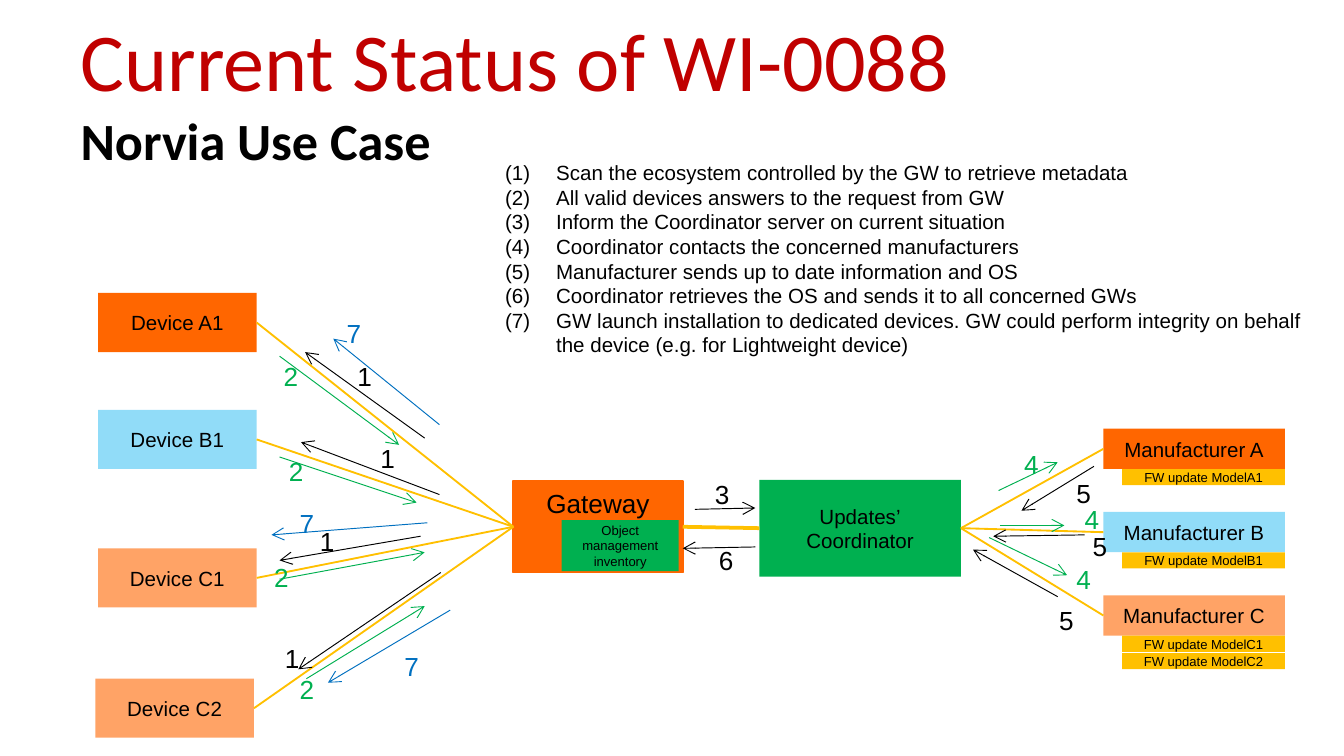
from pptx import Presentation
from pptx.dml.color import RGBColor
from pptx.enum.shapes import MSO_CONNECTOR as Connector, MSO_SHAPE as Shape
from pptx.enum.text import MSO_ANCHOR as Anchor, MSO_AUTO_SIZE as AutoSize, PP_ALIGN as Align
from pptx.oxml.ns import qn
from pptx.util import Inches, Pt
from lxml.etree import SubElement

COLORS = {
    "title": "C00000", "black": "000000", "green": "00B050", "blue": "0070C0",
    "orange": "FF6600", "sky": "00B0F0", "peach": "FFA366", "amber": "FFC000",
}
SKY_ALPHA = 43
STEP_COLORS = {1: "black", 2: "green", 3: "black", 4: "green", 5: "black", 6: "black", 7: "blue"}
TOP, LEFT, BOTTOM, RIGHT = range(4)

STEPS = [
    "Scan the ecosystem controlled by the GW to retrieve metadata",
    "All valid devices answers to the request from GW",
    "Inform the Coordinator server on current situation",
    "Coordinator contacts the concerned manufacturers",
    "Manufacturer sends up to date information and OS",
    "Coordinator retrieves the OS and sends it to all concerned GWs",
    "GW launch installation to dedicated devices. GW could perform integrity on behalf "
    "the device (e.g. for Lightweight device)",
]
# name, colour, left, top
DEVICES = [
    ("Device A1", "orange", 0.03, 0.18), ("Device B1", "sky", 0.03, 1.05),
    ("Device C1", "peach", 0.03, 2.08), ("Device C2", "peach", 0.01, 3.05),
]
# name, colour, firmware models
MANUFACTURERS = [
    ("Manufacturer A", "orange", ["A1"]),
    ("Manufacturer B", "sky", ["B1"]),
    ("Manufacturer C", "peach", ["C1", "C2"]),
]
# step, arrow start, arrow end, label corner; all relative to the region
DEVICE_FLOWS = [
    (1, (2.46, 1.26), (1.57, 0.62), (1.82, 0.65)),
    (1, (2.57, 1.68), (1.54, 1.29), (1.99, 1.26)),
    (1, (2.43, 1.99), (1.38, 2.17), (1.54, 1.88)),
    (1, (2.58, 2.26), (1.52, 2.98), (1.28, 2.75)),
    (2, (1.38, 0.65), (2.27, 1.31), (1.27, 0.65)),
    (2, (1.38, 1.4), (2.4, 1.74), (1.31, 1.36)),
    (2, (1.38, 2.31), (2.46, 2.11), (1.2, 2.15)),
    (2, (1.58, 3.05), (2.46, 2.51), (1.39, 2.98)),
    (7, (2.57, 1.16), (1.78, 0.52), (1.74, 0.33)),
    (7, (2.48, 1.89), (1.32, 1.98), (1.39, 1.75)),
    (7, (2.65, 2.54), (1.74, 3.08), (2.17, 2.81)),
]
HUB_FLOWS = [
    (3, (1.37, 0.29), (1.82, 0.28), (1.38, 0.03)),
    (6, (1.82, 0.57), (1.28, 0.58), (1.41, 0.52)),
]
MANUFACTURER_FLOWS = [
    (4, (0.43, 0.65), (0.87, 0.44), (0.48, 0.31)),
    (4, (0.44, 0.91), (0.92, 0.91), (0.93, 0.72)),
    (4, (0.36, 1), (0.94, 1.28), (0.87, 1.16)),
    (5, (1.14, 0.47), (0.6, 0.8), (0.87, 0.52)),
    (5, (1.07, 0.98), (0.39, 0.99), (0.99, 0.92)),
    (5, (0.87, 1.44), (0.24, 1.09), (0.74, 1.47)),
]


def rgb(name):
    return RGBColor.from_string(COLORS[name])


def add_span(para, text, size, color="black", font="Arial", bold=False):
    span = para.add_run()
    span.text = text
    span.font.size, span.font.name, span.font.bold = Pt(size), font, bold
    span.font.color.rgb = rgb(color)


def add_box(slide, left, top, width, height, lines, size, fill=None,
            color="black", kind=Shape.RECTANGLE, anchor=Anchor.MIDDLE):
    box = slide.shapes.add_shape(kind, *map(Inches, (left, top, width, height)))
    box.shadow.inherit = False
    box.line.fill.background()
    if fill:
        box.fill.solid()
        box.fill.fore_color.rgb = rgb(fill)
        if fill == "sky":
            tint = box.fill._xPr.find(qn("a:solidFill"))[0]
            SubElement(tint, qn("a:alpha")).set("val", str(SKY_ALPHA * 1000))
    else:
        box.fill.background()
    frame = box.text_frame
    frame.word_wrap, frame.vertical_anchor = True, anchor
    for index, line in enumerate(lines):
        para = frame.add_paragraph() if index else frame.paragraphs[0]
        para.alignment = Align.CENTER
        add_span(para, line, size, color)
    return box


def add_line(slide, start, end, color, width):
    line = slide.shapes.add_connector(Connector.STRAIGHT, *map(Inches, (*start, *end)))
    line.line.color.rgb = rgb(color)
    line.line.width = Pt(width)
    SubElement(line._element.spPr, qn("a:effectLst"))
    return line


def add_link(slide, start_box, end_box, width=1):
    """Join the right side of one box to the left side of the next."""
    link = add_line(slide, (0, 0), (0, 0), "amber", width)
    link.begin_connect(start_box, RIGHT)
    link.end_connect(end_box, LEFT)


def add_flows(slide, left, top, flows):
    """Draw numbered arrows for the steps of one region."""
    for step, start, end, label in flows:
        start, end, label = [(left + x, top + y) for x, y in (start, end, label)]
        arrow = add_line(slide, start, end, STEP_COLORS[step], 0.5)
        SubElement(arrow.line._get_or_add_ln(), qn("a:tailEnd")).set("type", "arrow")
        add_box(slide, *label, 0.28, 0.29, [str(step)], 14,
                color=STEP_COLORS[step], kind=Shape.OVAL)


def add_title(slide, left, top, width, height):
    title = slide.shapes.title
    title.left, title.top, title.width, title.height = map(Inches, (left, top, width, height))
    frame = title.text_frame
    frame.word_wrap, frame.auto_size, frame.vertical_anchor = True, AutoSize.NONE, Anchor.TOP
    heading, subheading = frame.paragraphs[0], frame.add_paragraph()
    heading.alignment = subheading.alignment = Align.LEFT
    add_span(heading, "Current Status of WI-0088", 44, "title", "Calibri")
    add_span(subheading, "Norvia Use Case", 28, "black", "Calibri", True)


def add_steps(slide, left, top, width, height):
    frame = slide.shapes.add_textbox(*map(Inches, (left, top, width, height))).text_frame
    frame.word_wrap = True
    for index, step in enumerate(STEPS):
        para = frame.add_paragraph() if index else frame.paragraphs[0]
        props = para._p.get_or_add_pPr()
        props.set("marL", str(Inches(0.38)))
        props.set("indent", str(-Inches(0.38)))
        SubElement(props, qn("a:buFont")).set("typeface", "Arial")
        SubElement(props, qn("a:buAutoNum")).set("type", "arabicParenBoth")
        add_span(para, step, 11)


def add_hub(slide, left, top):
    gateway = add_box(slide, left + 0.02, top + 0.08, 1.26, 0.68, ["Gateway"], 14,
                      "orange", anchor=Anchor.TOP)
    gateway.line.color.rgb = rgb("orange")
    gateway.line.width = Pt(1)
    coordinator = add_box(slide, left + 1.85, top + 0.07, 1.5, 0.72,
                          ["Updates’", "Coordinator"], 11, "green")
    add_link(slide, gateway, coordinator, 2)
    add_box(slide, left + 0.38, top + 0.37, 0.87, 0.38,
            ["Object management inventory"], 7, "green")
    add_flows(slide, left, top, HUB_FLOWS)
    return gateway, coordinator


def add_devices(slide, left, top, gateway):
    for name, fill, x, y in DEVICES:
        device = add_box(slide, left + x, top + y, 1.18, 0.44, [name], 11, fill)
        add_link(slide, device, gateway)
    add_flows(slide, left, top, DEVICE_FLOWS)


def add_manufacturers(slide, left, top, coordinator):
    for row, (name, fill, models) in enumerate(MANUFACTURERS):
        x, y = left + 1.21, top + 0.19 + 0.62 * row
        maker = add_box(slide, x, y, 1.35, 0.3, [name], 11, fill)
        add_link(slide, coordinator, maker)
        for index, model in enumerate(models):
            add_box(slide, x + 0.14, y + 0.3 + 0.13 * index, 1.21, 0.12,
                    [f"FW update Model{model}"], 7, "amber")
    add_flows(slide, left, top, MANUFACTURER_FLOWS)


def main():
    deck = Presentation()
    # Widescreen, 16:9
    deck.slide_width, deck.slide_height = Inches(10), Inches(10 * 9 / 16)
    slide = deck.slides.add_slide(deck.slide_layouts.get_by_name("Title Only"))
    add_title(slide, 0.5, 0.02, 9, 1.23)
    add_steps(slide, 3.66, 1.14, 6.2, 1.58)
    gateway, coordinator = add_hub(slide, 3.8, 3.5)
    add_devices(slide, 0.7, 2, gateway)
    add_manufacturers(slide, 7, 3, coordinator)
    deck.save("out.pptx")


if __name__ == "__main__":
    main()
